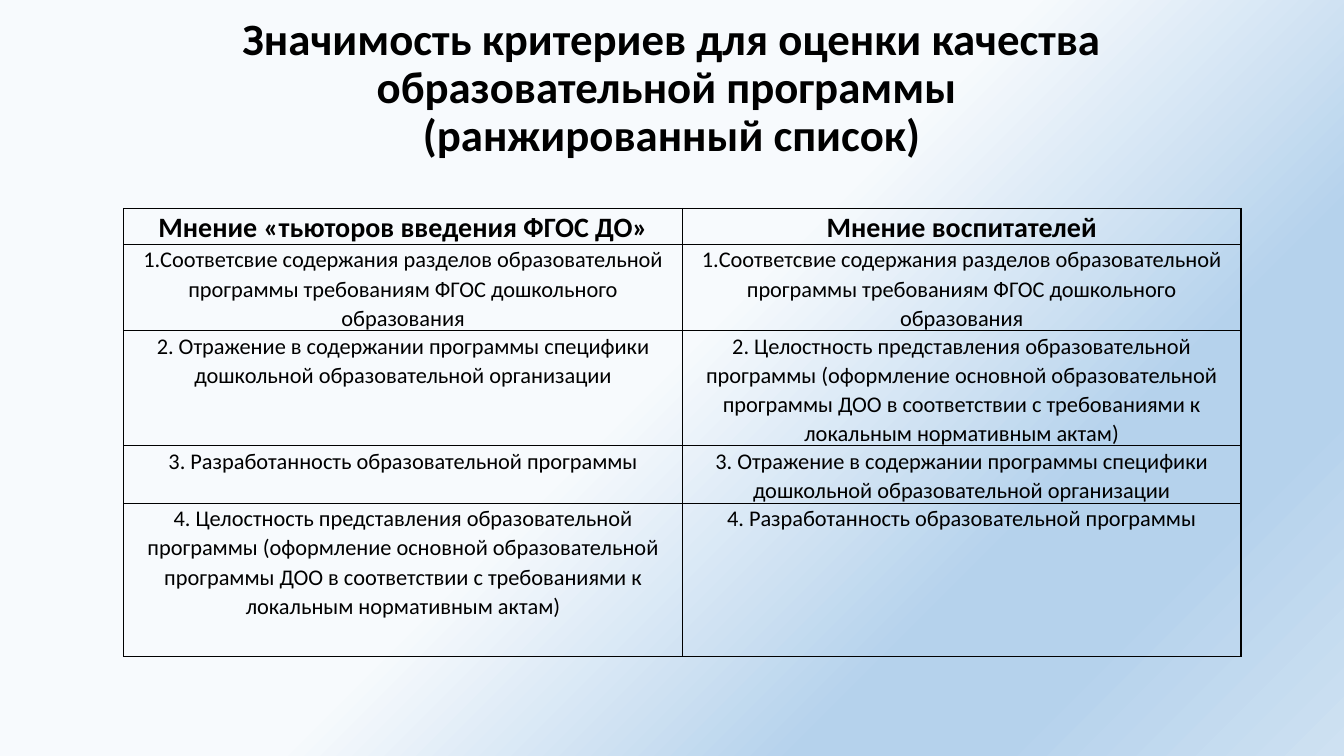
from pptx import Presentation
from pptx.dml.color import RGBColor
from pptx.enum.text import MSO_ANCHOR as Anchor, PP_ALIGN as Align
from pptx.oxml import parse_xml
from pptx.oxml.ns import nsdecls, qn
from pptx.util import Pt

BLACK = RGBColor(0x00, 0x00, 0x00)
PALE = RGBColor(0xF7, 0xFA, 0xFD)
SKY = RGBColor(0xB5, 0xD2, 0xEC)
MIST = RGBColor(0xCE, 0xE1, 0xF2)
GRADIENT = [(49, PALE), (74, SKY), (83, SKY), (100, MIST)]
FONT = "Calibri"

TITLE = [
    "Значимость критериев для оценки качества образовательной программы ",
    "(ранжированный список)",
]
CONTENT = "Соответсвие содержания разделов образовательной программы требованиям ФГОС дошкольного образования"
SPECIFICS = "Отражение в содержании программы специфики дошкольной образовательной организации"
ELABORATION = "Разработанность образовательной программы"
INTEGRITY = (
    "Целостность представления образовательной программы (оформление основной образовательной "
    "программы ДОО в соответствии с требованиями к локальным нормативным актам)"
)
ROWS = [
    ("Мнение «тьюторов введения ФГОС ДО»", "Мнение воспитателей"),
    ("1." + CONTENT, "1." + CONTENT),
    ("2. " + SPECIFICS, "2. " + INTEGRITY),
    ("3. " + ELABORATION, "3. " + SPECIFICS),
    ("4. " + INTEGRITY, "4. " + ELABORATION),
]
ROW_HEIGHTS = [18, 56, 75.5, 40.5, 109.5]


def paint_background(slide):
    """Fill the slide with the diagonal blue gradient."""
    fill = slide.background.fill
    fill.gradient()
    fill.gradient_angle = 315
    stops = next(slide.element.iter(qn("a:gsLst")))
    for stop in list(stops):
        stops.remove(stop)
    for position, color in GRADIENT:
        stops.append(parse_xml(
            f'<a:gs {nsdecls("a")} pos="{position * 1000}"><a:srgbClr val="{color}"/></a:gs>'))


def add_run(paragraph, text, size, bold):
    """Append one formatted run to a paragraph."""
    run = paragraph.add_run()
    run.text = text
    run.font.name = FONT
    run.font.size = Pt(size)
    run.font.bold = bold
    run.font.color.rgb = BLACK


def add_title(slide, left, top, width, height):
    """Place the centred title, raised above the middle of its box."""
    frame = slide.shapes.add_textbox(Pt(left), Pt(top), Pt(width), Pt(height)).text_frame
    frame.word_wrap = True
    frame.vertical_anchor = Anchor.MIDDLE
    frame.margin_bottom = Pt(39)
    paragraph = frame.paragraphs[0]
    paragraph.alignment = Align.CENTER
    paragraph.line_spacing = 0.9
    for index, line in enumerate(TITLE):
        if index:
            paragraph.add_line_break()
        add_run(paragraph, line, 32, True)


def border_cell(cell):
    """Draw a thin black line on every side of a cell."""
    properties = cell._tc.get_or_add_tcPr()
    for index, side in enumerate(("lnL", "lnR", "lnT", "lnB")):
        properties.insert(index, parse_xml(
            f'<a:{side} {nsdecls("a")} w="{Pt(1)}"><a:solidFill>'
            f'<a:srgbClr val="{BLACK}"/></a:solidFill></a:{side}>'))


def add_ranking(slide, left, top, width, height):
    """Place the two-column table of ranked criteria."""
    table = slide.shapes.add_table(
        len(ROWS), 2, Pt(left), Pt(top), Pt(width), Pt(height)).table
    table.horz_banding = False
    table.first_row = False
    for column in table.columns:
        column.width = Pt(width / 2)
    for row_index, (row, texts) in enumerate(zip(table.rows, ROWS)):
        row.height = Pt(ROW_HEIGHTS[row_index])
        is_header = row_index == 0
        for cell, text in zip(row.cells, texts):
            cell.fill.background()
            cell.margin_left = cell.margin_right = Pt(5)
            cell.margin_top = cell.margin_bottom = Pt(0)
            border_cell(cell)
            paragraph = cell.text_frame.paragraphs[0]
            paragraph.alignment = Align.CENTER
            paragraph.line_spacing = 1.07
            add_run(paragraph, text, 20 if is_header else 16, is_header)


def main():
    """Build the slide and save it."""
    presentation = Presentation()
    presentation.slide_width = Pt(960)
    presentation.slide_height = Pt(540)
    slide = presentation.slides.add_slide(presentation.slide_layouts[6])
    paint_background(slide)
    add_title(slide, 66, 29, 828, 104.5)
    add_ranking(slide, 88.5, 149, 798, sum(ROW_HEIGHTS))
    presentation.save("out.pptx")


if __name__ == "__main__":
    main()
